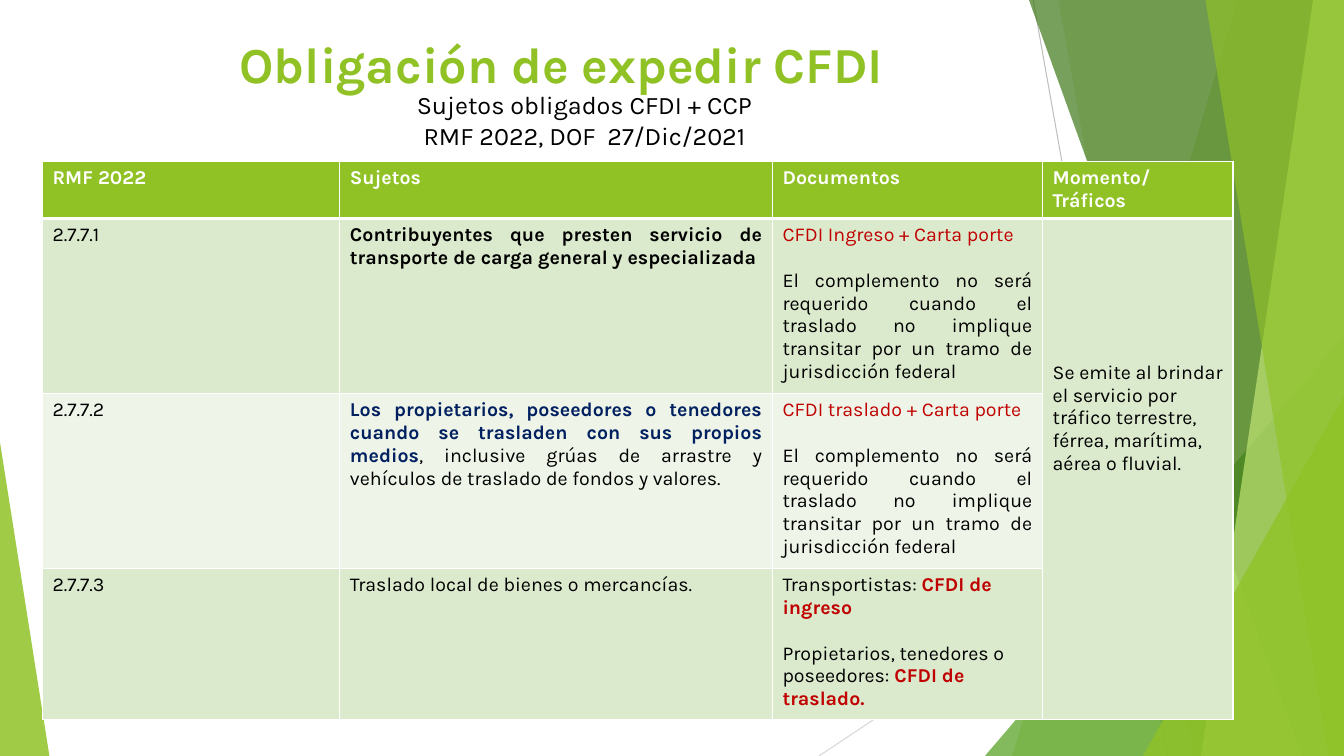
from dataclasses import dataclass

import lxml.etree
import pptx
import pptx.dml.color
import pptx.enum.shapes
import pptx.enum.text
import pptx.oxml.ns
import pptx.util

Pt = pptx.util.Pt
qn = pptx.oxml.ns.qn
ALIGN = pptx.enum.text.PP_ALIGN
FONT = "Karla"
WIDE, HIGH = 960, 540
HUES = {
    "white": "FFFFFF", "black": "000000", "red": "C00000", "navy": "002060",
    "lime": "90C226", "leaf": "54A021", "moss": "3F7819", "pale": "C0E474",
    "band": "DBE9CD", "light": "EEF4E8", "gray": "BFBFBF", "mist": "D9D9D9",
}


@dataclass
class Ray:
    start: tuple[float, float]
    end: tuple[float, float]
    hue: str


@dataclass
class Slab:
    """Full-height panel from a slanted left edge to the right slide edge."""
    top: float
    base: float
    hue: str
    alpha: int


@dataclass
class Wedge:
    left: float
    top: float
    width: float
    height: float
    apex: float
    hue: str
    alpha: int


@dataclass
class Run:
    text: str
    hue: str = "black"
    bold: bool = False


@dataclass
class Para:
    runs: list[Run]
    align: ALIGN = ALIGN.LEFT
    gap: float = 0


RAYS = [
    Ray((738, 0), (834, HIGH), "gray"),
    Ray((WIDE, 290), (585, HIGH), "mist"),
]
PANELS = [
    Slab(884, 723, "lime", 30),
    Slab(756, 852, "lime", 20),
    Wedge(703.5, 240, 256.5, 300, 1, "leaf", 72),
    Slab(735, 930, "moss", 70),
    Slab(938, 858, "pale", 70),
    Slab(861, 949, "lime", 65),
    Wedge(816.5, 283, 143.5, 257, 1, "lime", 80),
    Wedge(0, 316, 35.3, 224, 0, "lime", 85),
]

LINE = 16.37  # one line of 14 pt text
JUST = ALIGN.JUSTIFY
NOTE = Para([Run("El complemento no será requerido cuando el traslado no implique "
                 "transitar por un tramo de jurisdicción federal")], JUST, LINE)
HEADS = ["RMF 2022", "Sujetos", "Documentos", "Momento/ Tráficos"]
ROWS = [
    [[Para([Run(head, "white", True)])] for head in HEADS],
    [
        [Para([Run("2.7.7.1")])],
        [Para([Run("Contribuyentes que presten servicio de transporte de carga "
                   "general y especializada", bold=True)], JUST)],
        [Para([Run("CFDI Ingreso + Carta porte", "red")]), NOTE],
        [Para([Run("Se emite al brindar el servicio por tráfico terrestre, "
                   "férrea, marítima, aérea o fluvial.")])],
    ],
    [
        [Para([Run("2.7.7.2")])],
        [Para([Run("Los propietarios, poseedores o tenedores cuando se trasladen "
                   "con sus propios medios", "navy", True),
               Run(", inclusive grúas de arrastre y vehículos de traslado de "
                   "fondos y valores.")], JUST)],
        [Para([Run("CFDI traslado + Carta porte", "red")]), NOTE],
    ],
    [
        [Para([Run("2.7.7.3")])],
        [Para([Run("Traslado local de bienes o mercancías.")], JUST)],
        [Para([Run("Transportistas: "), Run("CFDI de ingreso", "red", True)]),
         Para([Run("Propietarios, tenedores o poseedores: "),
               Run("CFDI de traslado.", "red", True)], gap=LINE)],
    ],
]
COLS = [212.4, 309, 193, 136]
TALL = [40.7, 125, 125, 108]
FILLS = ["lime", "band", "light", "band"]


def rgb(hue: str) -> pptx.dml.color.RGBColor:
    return pptx.dml.color.RGBColor.from_string(HUES[hue])


def write(frame, paras: list[Para], size: float) -> None:
    for i, para in enumerate(paras):
        block = frame.paragraphs[0] if i == 0 else frame.add_paragraph()
        block.alignment = para.align
        block.space_before = Pt(para.gap)
        for run in para.runs:
            part = block.add_run()
            part.text = run.text
            part.font.name = FONT
            part.font.size = Pt(size)
            part.font.bold = run.bold
            part.font.color.rgb = rgb(run.hue)


def draw_ray(slide, ray: Ray) -> None:
    line = slide.shapes.add_connector(
        pptx.enum.shapes.MSO_CONNECTOR.STRAIGHT,
        *(Pt(n) for n in ray.start + ray.end))
    line.line.color.rgb = rgb(ray.hue)
    line.line.width = Pt(0.75)
    lxml.etree.SubElement(line._element.spPr, qn("a:effectLst"))


def draw_panel(slide, panel: Slab | Wedge) -> None:
    if isinstance(panel, Slab):
        form = slide.shapes.build_freeform(panel.top, 0, scale=Pt(1))
        form.add_line_segments([(WIDE, 0), (WIDE, HIGH), (panel.base, HIGH)])
        shape = form.convert_to_shape()
    else:
        shape = slide.shapes.add_shape(
            pptx.enum.shapes.MSO_SHAPE.ISOSCELES_TRIANGLE,
            Pt(panel.left), Pt(panel.top), Pt(panel.width), Pt(panel.height))
        shape.adjustments[0] = panel.apex
    shape.shadow.inherit = False
    shape.line.fill.background()
    shape.fill.solid()
    shape.fill.fore_color.rgb = rgb(panel.hue)
    tint = next(shape._element.spPr.iter(qn("a:srgbClr")))
    lxml.etree.SubElement(tint, qn("a:alpha"), val=str(panel.alpha * 1000))


def edge(cell, side: str, width: float) -> None:
    line = lxml.etree.SubElement(
        cell._tc.get_or_add_tcPr(), qn(f"a:ln{side}"), w=str(Pt(width)))
    fill = lxml.etree.SubElement(line, qn("a:solidFill"))
    lxml.etree.SubElement(fill, qn("a:srgbClr"), val=HUES["white"])


def draw_table(slide) -> None:
    table = slide.shapes.add_table(
        len(TALL), len(COLS), Pt(30.4), Pt(115.2),
        Pt(sum(COLS)), Pt(sum(TALL))).table
    for col, width in zip(table.columns, COLS):
        col.width = Pt(width)
    for r, height in enumerate(TALL):
        table.rows[r].height = Pt(height)
        for c in range(len(COLS)):
            cell = table.cell(r, c)
            # Thick rule under the header row
            for side, width in (("L", 1), ("R", 1), ("T", 3 if r == 1 else 1),
                                ("B", 3 if r == 0 else 1)):
                edge(cell, side, width)
            cell.fill.solid()
            last = c == len(COLS) - 1 and r > 0
            cell.fill.fore_color.rgb = rgb("band" if last else FILLS[r])
            if c < len(ROWS[r]):
                write(cell.text_frame, ROWS[r][c], 14)
    # Traffic cell spans all body rows, its text set lower
    span = table.cell(1, 3)
    span.merge(table.cell(3, 3))
    span.margin_top = Pt(102)


def place(shape, left: float, top: float, width: float, height: float) -> None:
    shape.left, shape.top = Pt(left), Pt(top)
    shape.width, shape.height = Pt(width), Pt(height)


def main() -> None:
    deck = pptx.Presentation()
    deck.slide_width, deck.slide_height = Pt(WIDE), Pt(HIGH)
    slide = deck.slides.add_slide(deck.slide_layouts[5])

    # Backdrop
    for ray in RAYS:
        draw_ray(slide, ray)
    for panel in PANELS:
        draw_panel(slide, panel)

    # Title, in front of the backdrop
    title = slide.shapes.title
    slide.shapes._spTree.append(title._element)
    place(title, 62.6, 20.2, 676.8, 103.7)
    frame = title.text_frame
    frame.auto_size = pptx.enum.text.MSO_AUTO_SIZE.NONE
    frame.vertical_anchor = pptx.enum.text.MSO_ANCHOR.TOP
    write(frame, [Para([Run("Obligación de expedir CFDI", "lime", True)],
                       ALIGN.CENTER)], 36)

    # Subtitle
    box = slide.shapes.add_textbox(Pt(105), Pt(60.5), Pt(625), Pt(51))
    box.text_frame.word_wrap = True
    write(box.text_frame, [Para([Run(text)], ALIGN.CENTER) for text in (
        "Sujetos obligados CFDI + CCP", "RMF 2022, DOF  27/Dic/2021")], 18)

    draw_table(slide)
    deck.save("out.pptx")


if __name__ == "__main__":
    main()
